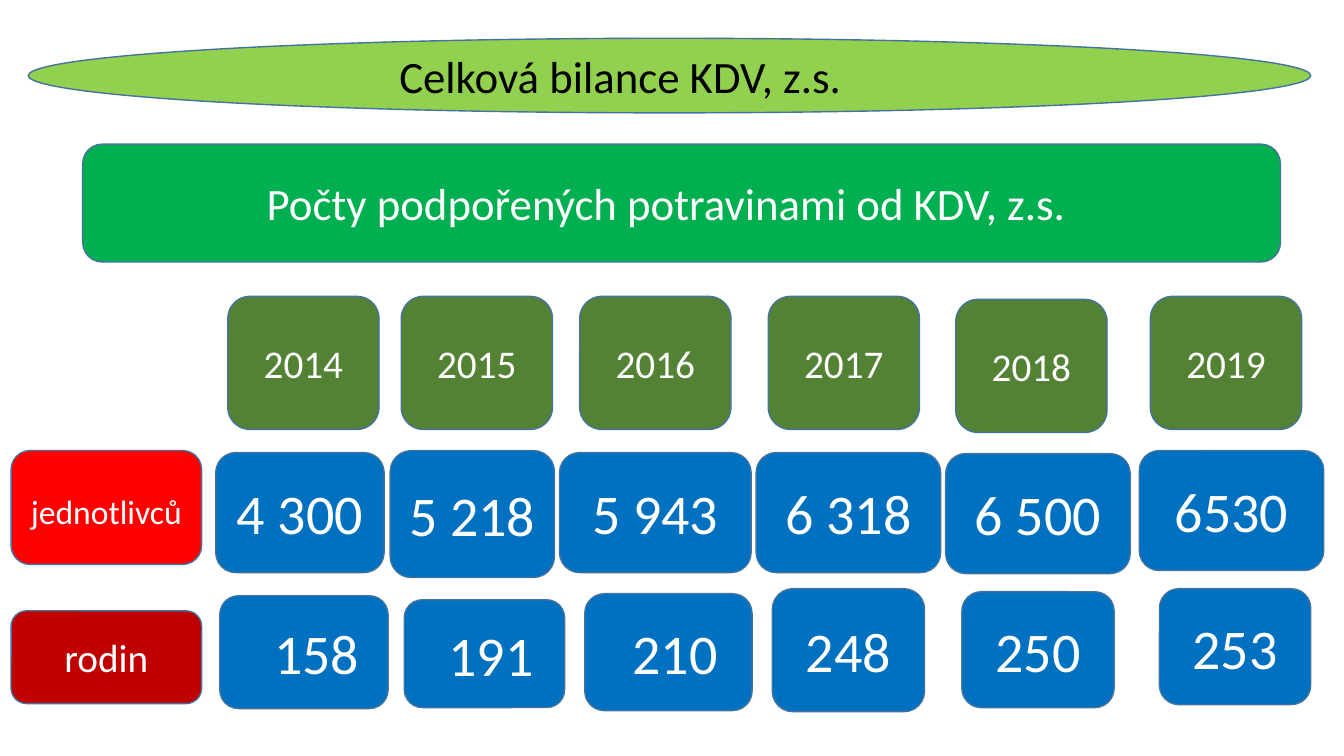
from dataclasses import dataclass

from pptx import Presentation
from pptx.dml.color import RGBColor
from pptx.enum.shapes import MSO_SHAPE
from pptx.enum.text import MSO_ANCHOR, MSO_AUTO_SIZE, PP_ALIGN
from pptx.shapes.autoshape import Shape
from pptx.slide import Slide
from pptx.util import Inches, Pt


@dataclass(frozen=True)
class Theme:
    font: str = "Calibri"
    black: str = "000000"
    white: str = "FFFFFF"
    edge: str = "43739E"
    lime: str = "92D050"
    green: str = "00B050"
    olive: str = "548235"
    blue: str = "0070C0"
    red: str = "FF0000"
    maroon: str = "C00000"
    label: int = 24
    year: int = 28
    head: int = 32
    value: int = 40


@dataclass(frozen=True)
class Box:
    text: str
    left: float
    top: float
    width: float
    height: float
    fill: str
    size: int
    left_pad: float = 0.1
    right_pad: float = 0.1
    top_pad: float = 0.05
    kind: MSO_SHAPE = MSO_SHAPE.ROUNDED_RECTANGLE


@dataclass(frozen=True)
class Cell:
    text: str
    left: float
    top: float
    width: float
    height: float
    pad: float = 0.1


@dataclass(frozen=True)
class Year:
    text: str
    left: float
    people: Cell
    homes: Cell
    top: float = 2.94


THEME = Theme()
GROUP = "KDV, z.s."

YEARS = [
    Year("2014", 2.26, Cell("4 300", 2.14, 4.49, 1.67, 1.19),
         Cell("158", 2.18, 5.91, 1.67, 1.12, 0.35)),
    Year("2015", 3.98, Cell("5 218", 3.87, 4.47, 1.63, 1.26),
         Cell("191", 4.01, 5.95, 1.59, 1.07, 0.23)),
    Year("2016", 5.75, Cell("5 943", 5.55, 4.49, 1.9, 1.19),
         Cell("210", 5.8, 5.89, 1.66, 1.16, 0.23)),
    Year("2017", 7.62, Cell("6 318", 7.5, 4.49, 1.83, 1.19),
         Cell("248", 7.66, 5.84, 1.51, 1.22)),
    Year("2018", 9.48, Cell("6 500", 9.38, 4.5, 1.83, 1.19),
         Cell("250", 9.54, 5.87, 1.51, 1.15), 2.97),
    Year("2019", 11.41, Cell("6530", 11.3, 4.47, 1.83, 1.19),
         Cell("253", 11.5, 5.84, 1.5, 1.15)),
]

OVAL = Box("", 0.28, 0.38, 12.72, 0.74, THEME.lime, THEME.head,
           kind=MSO_SHAPE.OVAL)

LABELS = [
    Box(f"Počty podpořených potravinami od {GROUP}", 0.82, 1.43, 11.88, 1.17,
        THEME.green, THEME.head, right_pad=0.4),
    Box("jednotlivců", 0.11, 4.47, 1.89, 1.13, THEME.red, THEME.label,
        top_pad=0.13),
    Box("rodin", 0.11, 6.06, 1.89, 0.92, THEME.maroon, THEME.year),
]


def style(shape: Shape, size: int, color: str, align: PP_ALIGN) -> None:
    para = shape.text_frame.paragraphs[0]
    para.alignment = align
    para.line_spacing = 1.0
    para.space_before = Pt(0)
    para.font.name = THEME.font
    para.font.size = Pt(size)
    para.font.color.rgb = RGBColor.from_string(color)


def draw_box(slide: Slide, box: Box) -> Shape:
    shape = slide.shapes.add_shape(
        box.kind, Inches(box.left), Inches(box.top),
        Inches(box.width), Inches(box.height))
    shape.shadow.inherit = False
    shape.fill.solid()
    shape.fill.fore_color.rgb = RGBColor.from_string(box.fill)
    shape.line.color.rgb = RGBColor.from_string(THEME.edge)
    shape.line.width = Pt(1)
    if box.text:
        frame = shape.text_frame
        frame.text = box.text
        frame.word_wrap = True
        frame.vertical_anchor = MSO_ANCHOR.MIDDLE
        frame.margin_left = Inches(box.left_pad)
        frame.margin_right = Inches(box.right_pad)
        frame.margin_top = Inches(box.top_pad)
        style(shape, box.size, THEME.white, PP_ALIGN.CENTER)
    return shape


def draw_title(slide: Slide) -> None:
    oval = draw_box(slide, OVAL)
    title = slide.shapes.title
    title.left, title.top = Inches(3.86), Inches(0.43)
    title.width, title.height = Inches(6.29), Inches(0.64)
    frame = title.text_frame
    frame.text = f"Celková bilance {GROUP}"
    frame.word_wrap = True
    frame.auto_size = MSO_AUTO_SIZE.NONE
    frame.vertical_anchor = MSO_ANCHOR.TOP
    style(title, THEME.head, THEME.black, PP_ALIGN.LEFT)
    oval.element.addnext(title.element)


def draw_year(slide: Slide, year: Year) -> None:
    draw_box(slide, Box(year.text, year.left, year.top, 1.5, 1.32,
                        THEME.olive, THEME.year))
    for cell in (year.people, year.homes):
        draw_box(slide, Box(cell.text, cell.left, cell.top, cell.width,
                            cell.height, THEME.blue, THEME.value, cell.pad))


def main() -> None:
    deck = Presentation()
    deck.slide_width, deck.slide_height = Inches(13.33), Inches(7.5)
    slide = deck.slides.add_slide(deck.slide_layouts[5])
    draw_title(slide)
    for label in LABELS:
        draw_box(slide, label)
    for year in YEARS:
        draw_year(slide, year)
    deck.save("out.pptx")


if __name__ == "__main__":
    main()
